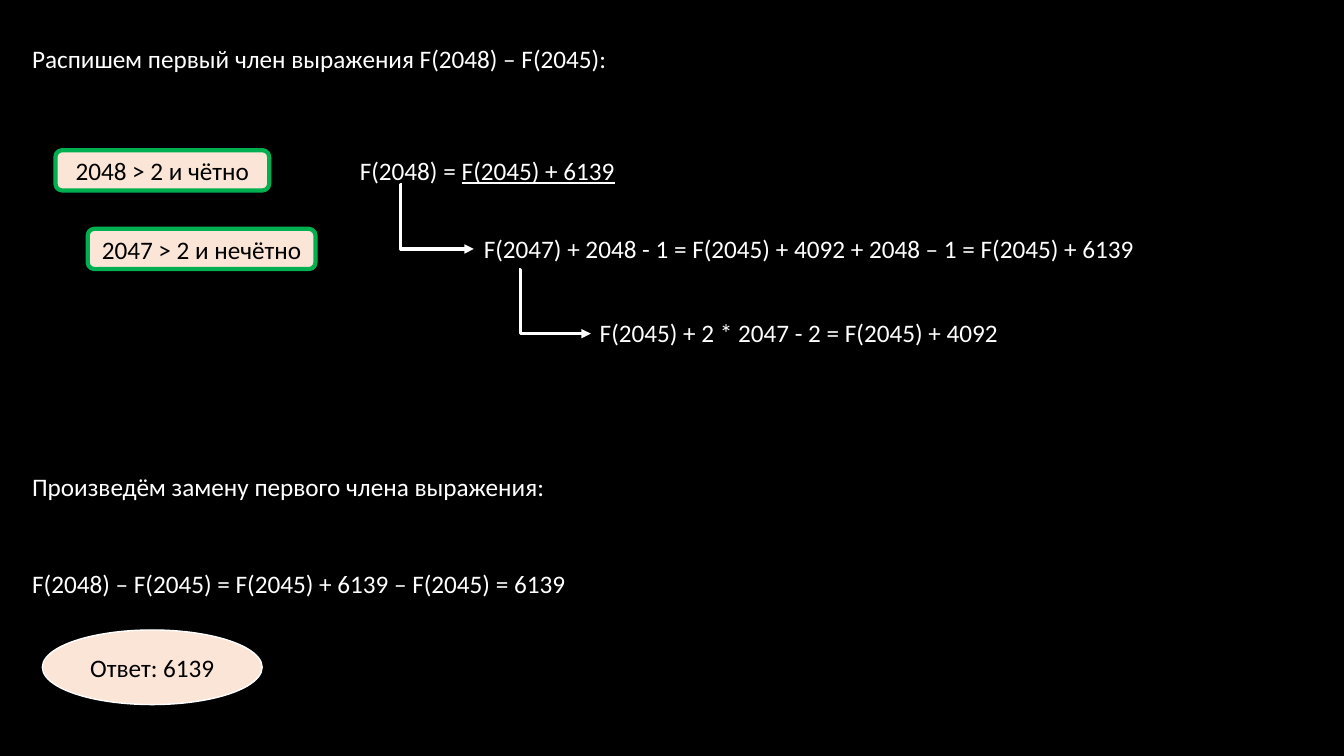
from lxml import etree
from pptx import Presentation
from pptx import util as u
from pptx.dml.color import RGBColor
from pptx.enum import shapes, text
from pptx.oxml import ns

BLACK = RGBColor(0x00, 0x00, 0x00)
WHITE = RGBColor(0xFF, 0xFF, 0xFF)
PEACH = RGBColor(0xFB, 0xE5, 0xD6)
GREEN = RGBColor(0x00, 0xB0, 0x50)

LINE_HEIGHT = 0.4
MARGIN_LEFT = 0.22
FIRST_ROW, SECOND_ROW, THIRD_ROW = 1.49, 2.27, 3.1


class SolutionSlide:
    font_format = {"name": "Calibri", "size": u.Pt(18)}
    formula_format = {
        "word_wrap": True,
        "auto_size": text.MSO_AUTO_SIZE.SHAPE_TO_FIT_TEXT,
    }
    badge_format = {"word_wrap": True, "vertical_anchor": text.MSO_ANCHOR.MIDDLE}

    def __init__(self, presentation):
        self.slide = presentation.slides.add_slide(presentation.slide_layouts[6])
        background = self.slide.background.fill
        background.solid()
        background.fore_color.rgb = BLACK

    def apply(self, target, formats):
        for attribute, value in formats.items():
            setattr(target, attribute, value)

    def add_wording(self, paragraph, wording, color, underline=None):
        run = paragraph.add_run()
        run.text = wording
        self.apply(run.font, {**self.font_format, "underline": underline})
        run.font.color.rgb = color

    def formula(self, left, top, width, wording, underlined=""):
        box = self.slide.shapes.add_textbox(
            u.Inches(left), u.Inches(top), u.Inches(width), u.Inches(LINE_HEIGHT))
        self.apply(box.text_frame, self.formula_format)
        paragraph = box.text_frame.paragraphs[0]
        self.add_wording(paragraph, wording, WHITE)
        if underlined:
            self.add_wording(paragraph, underlined, WHITE, True)

    def badge(self, kind, left, top, width, height, wording, outline, weight):
        badge = self.slide.shapes.add_shape(
            kind, u.Inches(left), u.Inches(top), u.Inches(width), u.Inches(height))
        badge.shadow.inherit = False
        badge.fill.solid()
        badge.fill.fore_color.rgb = PEACH
        badge.line.color.rgb = outline
        badge.line.width = u.Pt(weight)
        self.apply(badge.text_frame, self.badge_format)
        paragraph = badge.text_frame.paragraphs[0]
        paragraph.alignment = text.PP_ALIGN.CENTER
        self.add_wording(paragraph, wording, BLACK)

    def expansion_arrow(self, left, top, bend):
        arrow = self.slide.shapes.add_connector(
            shapes.MSO_CONNECTOR.ELBOW, u.Inches(left), u.Inches(top),
            u.Inches(left + 0.71), u.Inches(top + 0.64))
        arrow.line.color.rgb = WHITE
        arrow.line.width = u.Pt(2.25)
        properties = arrow._element.spPr
        guides = properties.find(".//" + ns.qn("a:avLst"))
        etree.SubElement(guides, ns.qn("a:gd"), name="adj1", fmla=f"val {bend}")
        outline = properties.find(ns.qn("a:ln"))
        etree.SubElement(outline, ns.qn("a:tailEnd"), type="triangle")
        etree.SubElement(properties, ns.qn("a:effectLst"))


def main():
    presentation = Presentation()
    presentation.slide_width = u.Inches(13.33)
    presentation.slide_height = u.Inches(7.5)
    solution = SolutionSlide(presentation)

    solution.formula(3.47, FIRST_ROW, 3.62, "F(2048) = ", "F(2045) + 6139")
    solution.formula(4.7, SECOND_ROW, 7.67,
                     "F(2047) + 2048 - 1 = F(2045) + 4092 + 2048 – 1 = F(2045) + 6139")
    solution.formula(5.85, THIRD_ROW, 4.87, "F(2045) + 2 * 2047 - 2 = F(2045) + 4092")

    for left, top, width, condition in (
        (0.55, FIRST_ROW, 2.12, "2048 > 2 и чётно"),
        (0.87, SECOND_ROW, 2.26, "2047 > 2 и нечётно"),
    ):
        solution.badge(shapes.MSO_SHAPE.ROUNDED_RECTANGLE, left, top, width,
                       LINE_HEIGHT, condition, GREEN, 3)

    solution.expansion_arrow(3.99, 1.83, -2100)
    solution.expansion_arrow(5.15, 2.67, 1700)

    for top, width, step in (
        (0.38, 6.06, "Распишем первый член выражения F(2048) – F(2045):"),
        (4.63, 6.06, "Произведём замену первого члена выражения:"),
        (5.59, 8.12, "F(2048) – F(2045) = F(2045) + 6139 – F(2045) = 6139"),
    ):
        solution.formula(MARGIN_LEFT, top, width, step)

    solution.badge(shapes.MSO_SHAPE.OVAL, 0.42, 6.25, 2.18, 0.74,
                   "Ответ: 6139", WHITE, 1)

    presentation.save("out.pptx")


if __name__ == "__main__":
    main()
